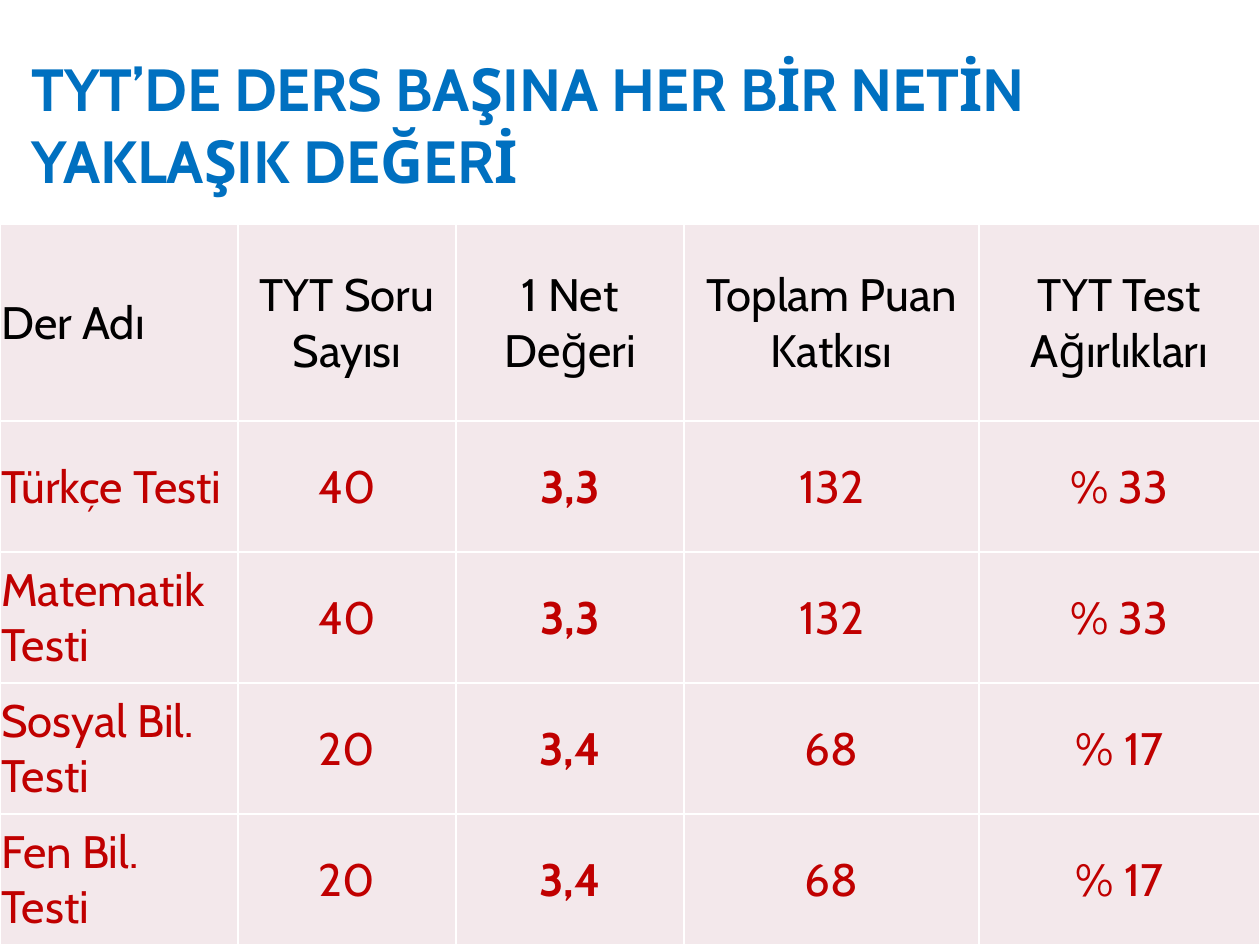
from lxml import etree
from pptx import Presentation
from pptx.dml.color import RGBColor
from pptx.enum.text import MSO_ANCHOR, MSO_AUTO_SIZE, PP_ALIGN
from pptx.oxml.ns import qn
from pptx.util import Inches, Pt

COLORS = {"title": "0070C0", "header": "000000", "body": "C00000",
          "cell": "F3E8EB", "border": "FFFFFF"}
FONT = "Cabin"
TITLE = "TYT’DE DERS BAŞINA HER BİR NETİN YAKLAŞIK DEĞERİ"
ROWS = [
    ["Der Adı", "TYT Soru Sayısı", "1 Net Değeri", "Toplam Puan Katkısı", "TYT Test Ağırlıkları"],
    ["Türkçe Testi", "40", "3,3", "132", "% 33"],
    ["Matematik Testi", "40", "3,3", "132", "% 33"],
    ["Sosyal Bil. Testi", "20", "3,4", "68", "% 17"],
    ["Fen Bil. Testi", "20", "3,4", "68", "% 17"],
]
COL_WIDTHS = [1.89, 1.73, 1.81, 2.34, 2.23]
ROW_HEIGHTS = [1.56] + [1.04] * 4
NET_COL = 2


def set_attrs(obj, values):
    for name, value in values.items():
        setattr(obj, name, value)


def format_paragraph(p, size, color, bold, align):
    p.alignment = align
    font = p.runs[0].font
    set_attrs(font, {"name": FONT, "size": Pt(size), "bold": bold})
    font.color.rgb = RGBColor.from_string(COLORS[color])


def add_borders(cell):
    """Draw a one-point line on all sides; lines must precede the cell fill in the XML."""
    tcPr = cell._tc.get_or_add_tcPr()
    for i, side in enumerate(("lnL", "lnR", "lnT", "lnB")):
        ln = etree.Element(qn(f"a:{side}"), w=str(Pt(1)))
        fill = etree.SubElement(ln, qn("a:solidFill"))
        etree.SubElement(fill, qn("a:srgbClr"), val=COLORS["border"])
        tcPr.insert(i, ln)


def place_title(s, left, top, width, height):
    sp = s.shapes.title
    set_attrs(sp, {"left": Inches(left), "top": Inches(top),
                   "width": Inches(width), "height": Inches(height)})
    tf = sp.text_frame
    tf.text = TITLE
    set_attrs(tf, {"word_wrap": True, "auto_size": MSO_AUTO_SIZE.NONE,
                   "vertical_anchor": MSO_ANCHOR.BOTTOM,
                   "margin_left": Inches(0.05), "margin_right": Inches(0.05),
                   "margin_top": 0, "margin_bottom": 0})
    format_paragraph(tf.paragraphs[0], 34, "title", True, PP_ALIGN.LEFT)


def fill_cell(cell, text, row, col):
    cell.text = text
    set_attrs(cell, {"vertical_anchor": MSO_ANCHOR.MIDDLE,
                     "margin_left": Inches(0.01), "margin_right": Inches(0.01),
                     "margin_top": Inches(0.01), "margin_bottom": 0})
    cell.fill.solid()
    cell.fill.fore_color.rgb = RGBColor.from_string(COLORS["cell"])
    add_borders(cell)
    format_paragraph(cell.text_frame.paragraphs[0], 26,
                     "body" if row else "header",
                     row > 0 and col == NET_COL,
                     PP_ALIGN.CENTER if col else PP_ALIGN.LEFT)


def add_score_table(s, left, top, width, height):
    table = s.shapes.add_table(len(ROWS), len(COL_WIDTHS), Inches(left), Inches(top),
                               Inches(width), Inches(height)).table
    set_attrs(table, {"first_row": False, "horz_banding": False})
    for column, col_width in zip(table.columns, COL_WIDTHS):
        column.width = Inches(col_width)
    for row, row_height in zip(table.rows, ROW_HEIGHTS):
        row.height = Inches(row_height)
    for r, texts in enumerate(ROWS):
        for c, text in enumerate(texts):
            fill_cell(table.cell(r, c), text, r, c)


def main():
    prs = Presentation()
    set_attrs(prs, {"slide_width": Inches(10), "slide_height": Inches(7.5)})
    s = prs.slides.add_slide(prs.slide_layouts.get_by_name("Title Only"))
    place_title(s, 0.2, 0.3, 9.45, 1.25)
    add_score_table(s, 0, 1.78, sum(COL_WIDTHS), sum(ROW_HEIGHTS))
    prs.save("out.pptx")


if __name__ == "__main__":
    main()
